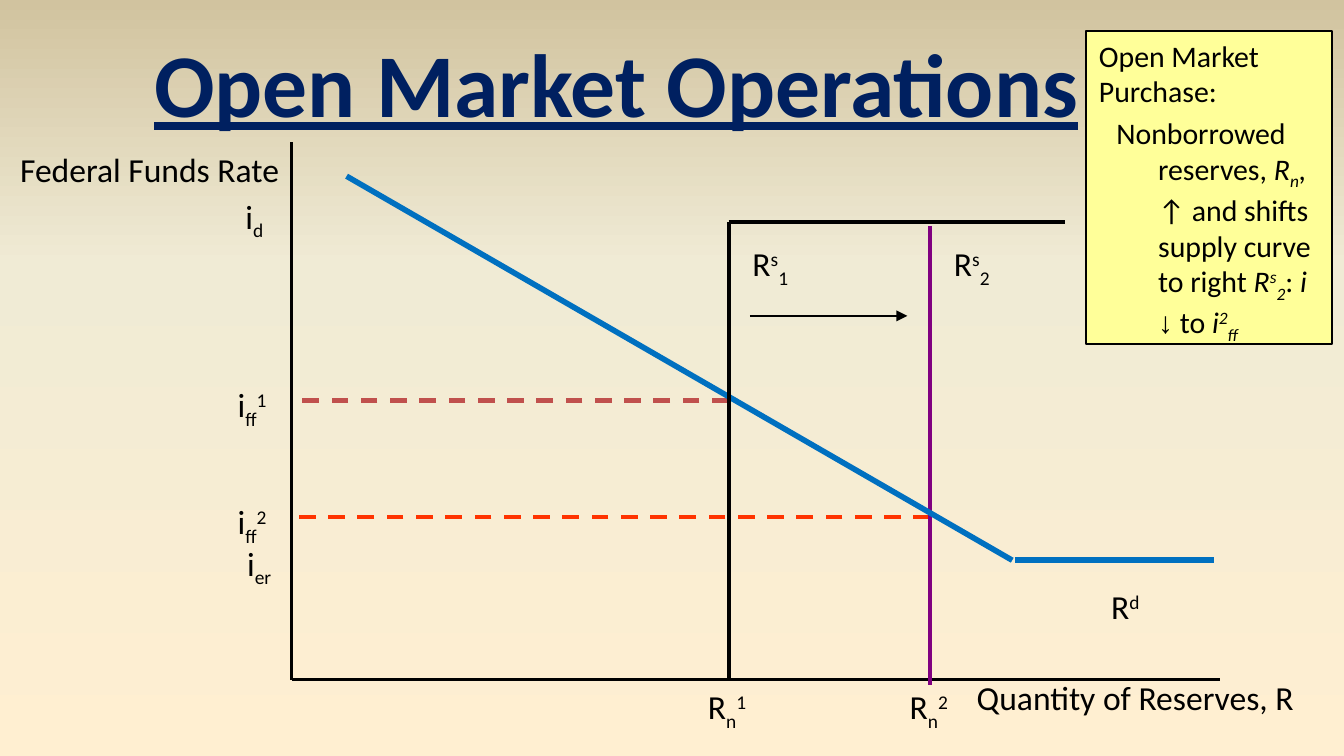
"""Build a slide on how open market buying shifts the supply of reserves."""
import copy
from dataclasses import dataclass
from typing import NamedTuple

import lxml.etree
import pptx
import pptx.dml.color
import pptx.enum.dml
import pptx.enum.shapes
import pptx.enum.text
import pptx.oxml.ns
import pptx.util

Cm = pptx.util.Cm
Pt = pptx.util.Pt
qn = pptx.oxml.ns.qn
ALIGN = pptx.enum.text.PP_ALIGN
FIT = pptx.enum.text.MSO_AUTO_SIZE

COLORS = {
    "ink": "000000", "title": "002060", "demand": "0070C0", "shift": "800080",
    "rate1": "C0504D", "rate2": "FF3300", "note": "FFFF99",
}
GROUND = ((0, "FFEFD1"), (65, "F0EBD5"), (100, "D1C39F"))
SUB, SUP = -25, 30

LEFT, TOP, BASE = 5.51, 2.69, 12.85
RES1, RES2 = 13.77, 17.58
RATE1, RATE2 = 7.57, 9.78
CEIL, FLOOR = 4.19, 10.59


class Bit(NamedTuple):
    text: str
    shift: int = 0
    slant: bool = False
    face: str = ""


@dataclass(frozen=True)
class Label:
    left: float
    top: float
    width: float
    bits: tuple[Bit, ...]
    wrap: bool = False
    align: ALIGN = ALIGN.LEFT


@dataclass(frozen=True)
class Line:
    start: tuple[float, float]
    end: tuple[float, float]
    color: str = "ink"
    weight: float = 2.25
    dash: bool = False
    arrow: bool = False


LINES = (
    Line((LEFT, TOP), (LEFT, BASE), weight=1.5),
    Line((LEFT, BASE), (23.06, BASE), weight=1.5),
    Line((RES1, RATE1), (LEFT, RATE1), "rate1", dash=True),
    Line((RES2, RATE2), (LEFT, RATE2), "rate2", dash=True),
    Line((RES2, 4.27), (RES2, 12.95), "shift"),
    Line((14.17, 5.97), (17.15, 5.97), weight=0.75, arrow=True),
    Line((6.55, 3.33), (19.13, FLOOR), "demand", 3),
    Line((RES1, BASE), (RES1, CEIL)),
    Line((RES1, CEIL), (20.12, CEIL)),
    Line((19.18, FLOOR), (22.94, FLOOR), "demand", 3),
)


def pair_labels(num: str, rate: float, quant: float) -> tuple[Label, ...]:
    """Give the rate, reserve and supply labels of one state."""
    return (
        Label(4.24, rate - 0.43, 1.12, (Bit("i"), Bit("ff", SUB), Bit(num, SUP))),
        Label(quant - 0.64, BASE, 1.45, (Bit("R"), Bit("n", SUB), Bit(num, SUP))),
        Label(quant + 0.2, 4.47, 1.42, (Bit("R"), Bit("s", SUP), Bit(num, SUB))),
    )


LABELS = (
    Label(4.39, 3.58, 0.89, (Bit("i"), Bit("d", SUB))),
    *pair_labels("1", RATE1, RES1),
    *pair_labels("2", RATE2, RES2),
    Label(20.75, 10.95, 1.19, (Bit("R"), Bit("d", SUP))),
    Label(4.42, 10.13, 1.35, (Bit("i"), Bit("er", SUB)), True),
    Label(0, TOP, 5.66, (Bit("Federal Funds Rate"),), True, ALIGN.CENTER),
    Label(18.21, 12.67, 6.55, (Bit("Quantity of Reserves, R"),), True),
)
NOTE = (
    (Bit("Open Market Purchase:"),),
    (
        Bit("Nonborrowed reserves, "), Bit("R", 0, True), Bit("n", SUB, True),
        Bit(", ", 0, True), Bit("↑ and shifts supply curve to right "),
        Bit("R", 0, True), Bit("s", SUP, True), Bit("2", SUB, True), Bit(": "),
        Bit("i ", 0, True), Bit("↓", face="Arial"), Bit(" to "),
        Bit("i", 0, True), Bit("2", SUP, True), Bit("ff", SUB, True),
    ),
)


def shade(name: str) -> pptx.dml.color.RGBColor:
    """Look up a colour by name."""
    return pptx.dml.color.RGBColor.from_string(COLORS[name])


def write(para, bits: tuple[Bit, ...], size: float, color: str = "ink") -> None:
    """Fill a paragraph with styled bits of text."""
    para.font.name = "Calibri"
    para.font.size = Pt(size)
    para.font.color.rgb = shade(color)
    for bit in bits:
        run = para.add_run()
        run.text = bit.text
        if bit.slant:
            run.font.italic = True
        if bit.face:
            run.font.name = bit.face
        if bit.shift:
            run.font._element.set("baseline", str(bit.shift * 1000))


def place(shape, left: float, top: float, width: float, height: float) -> None:
    """Move and size a shape."""
    shape.left, shape.top = Cm(left), Cm(top)
    shape.width, shape.height = Cm(width), Cm(height)


def draw_ground(slide) -> None:
    """Paint the slide with a three-stop gradient."""
    fill = slide.background.fill
    fill.gradient()
    fill.gradient_angle = 90
    stops = fill.gradient_stops[0]._gs.getparent()
    stops.append(copy.deepcopy(stops[-1]))
    for stop, (spot, color) in zip(fill.gradient_stops, GROUND):
        stop.position = spot / 100
        stop.color.rgb = pptx.dml.color.RGBColor.from_string(color)


def draw_title(slide) -> None:
    """Set the slide title."""
    title = slide.shapes.title
    place(title, 2.57, 0.38, 18.16, 2.31)
    frame = title.text_frame
    frame.word_wrap = False
    frame.auto_size = FIT.NONE
    para = frame.paragraphs[0]
    para.alignment = ALIGN.CENTER
    write(para, (Bit("Open Market Operations"),), 48, "title")
    para.font.bold = para.font.underline = True


def draw_line(slide, line: Line) -> None:
    """Draw one straight line."""
    ends = [Cm(num) for num in (*line.start, *line.end)]
    shape = slide.shapes.add_connector(pptx.enum.shapes.MSO_CONNECTOR.STRAIGHT, *ends)
    shape.line.color.rgb = shade(line.color)
    shape.line.width = Pt(line.weight)
    if line.dash:
        shape.line.dash_style = pptx.enum.dml.MSO_LINE.DASH
    if line.arrow:
        lxml.etree.SubElement(shape.line._get_or_add_ln(), qn("a:tailEnd"), type="triangle")
    lxml.etree.SubElement(shape._element.spPr, qn("a:effectLst"))


def draw_label(slide, label: Label) -> None:
    """Draw one text label."""
    spot = (Cm(num) for num in (label.left, label.top, label.width, 1.02))
    frame = slide.shapes.add_textbox(*spot).text_frame
    frame.word_wrap = label.wrap
    frame.auto_size = FIT.SHAPE_TO_FIT_TEXT
    frame.paragraphs[0].alignment = label.align
    write(frame.paragraphs[0], label.bits, 18)


def draw_note(slide) -> None:
    """Draw the yellow note."""
    spot = (Cm(num) for num in (20.52, 0.58, 4.65, 5.92))
    box = slide.shapes.add_shape(pptx.enum.shapes.MSO_SHAPE.RECTANGLE, *spot)
    box.shadow.inherit = False
    box.fill.solid()
    box.fill.fore_color.rgb = shade("note")
    box.line.color.rgb = shade("ink")
    box.line.width = Pt(1)
    frame = box.text_frame
    frame.word_wrap = True
    frame.vertical_anchor = pptx.enum.text.MSO_ANCHOR.TOP
    paras = (frame.paragraphs[0], frame.add_paragraph())
    for para, bits in zip(paras, NOTE):
        para.alignment = ALIGN.LEFT
        para.space_before = Pt(3.2)
        write(para, bits, 16)
    props = paras[1]._p.get_or_add_pPr()
    props.set("marL", str(Cm(1.12)))
    props.set("indent", str(-Cm(0.79)))


def main() -> None:
    """Build and save the slide."""
    deck = pptx.Presentation()
    deck.slide_width, deck.slide_height = Cm(25.4), Cm(14.29)
    slide = deck.slides.add_slide(deck.slide_layouts[5])
    draw_ground(slide)
    draw_title(slide)
    for line in LINES:
        draw_line(slide, line)
    for label in LABELS:
        draw_label(slide, label)
    draw_note(slide)
    deck.save("out.pptx")


if __name__ == "__main__":
    main()
